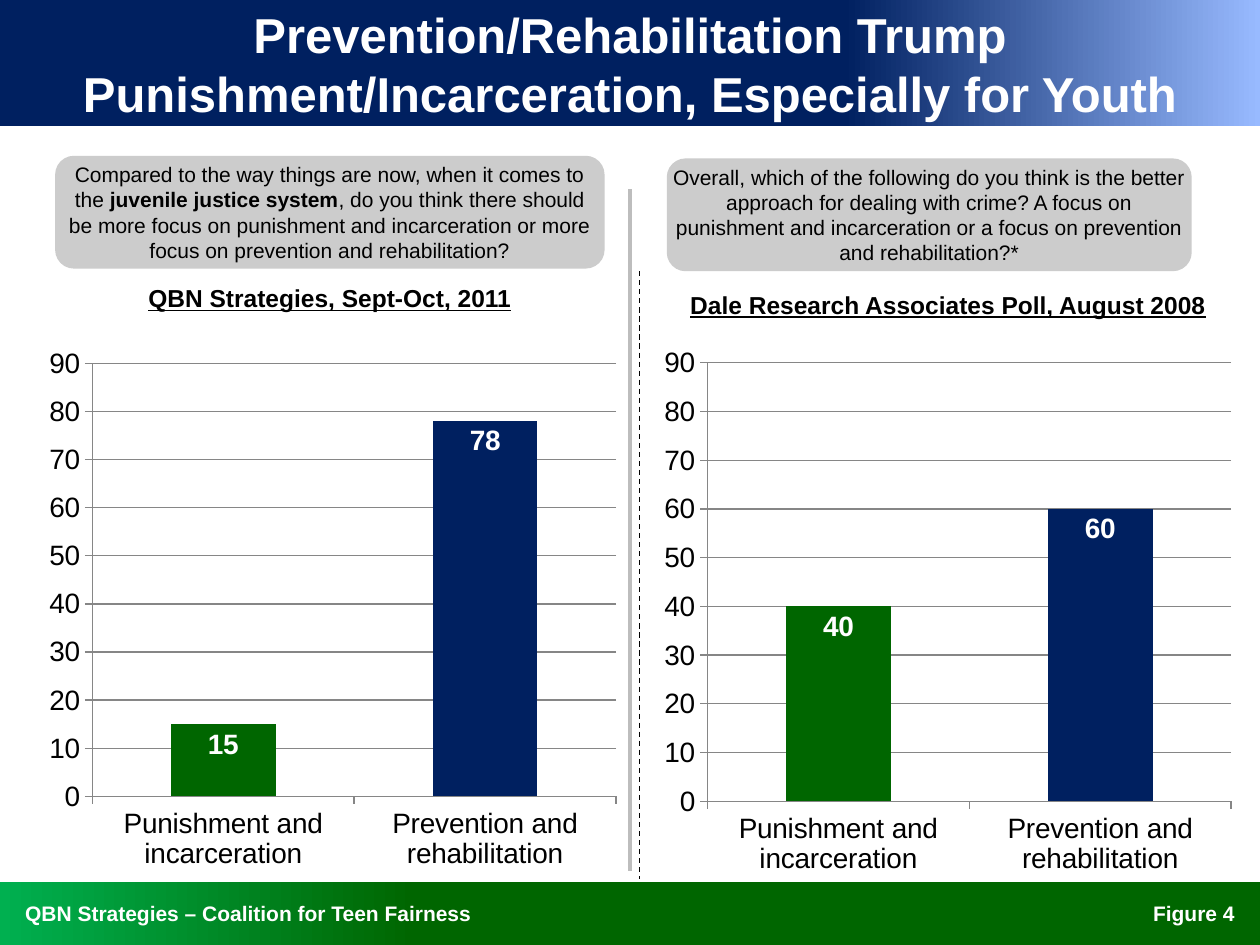
from lxml import etree
from pptx import Presentation
from pptx.chart.data import CategoryChartData
from pptx.dml.color import RGBColor
from pptx.enum.chart import XL_CHART_TYPE, XL_LABEL_POSITION, XL_TICK_MARK
from pptx.enum.dml import MSO_LINE
from pptx.enum.shapes import MSO_CONNECTOR, MSO_SHAPE
from pptx.enum.text import MSO_ANCHOR, MSO_AUTO_SIZE, PP_ALIGN
from pptx.oxml import parse_xml
from pptx.oxml.ns import qn
from pptx.util import Pt

COLUMN = XL_CHART_TYPE.COLUMN_CLUSTERED
INSIDE_END = XL_LABEL_POSITION.INSIDE_END
OUTSIDE = XL_TICK_MARK.OUTSIDE
STRAIGHT = MSO_CONNECTOR.STRAIGHT
DASH = MSO_LINE.DASH
RECT, ROUNDED = MSO_SHAPE.RECTANGLE, MSO_SHAPE.ROUNDED_RECTANGLE
MIDDLE, TOP = MSO_ANCHOR.MIDDLE, MSO_ANCHOR.TOP
LEFT, CENTER, RIGHT = PP_ALIGN.LEFT, PP_ALIGN.CENTER, PP_ALIGN.RIGHT
NO_FIT = MSO_AUTO_SIZE.NONE

FONT = "Arial"
NAVY, GREEN, WHITE, BLACK = "002060", "006600", "FFFFFF", "000000"
GRID_GRAY = "868686"
WIDTH, HEIGHT = 720, 540
CATEGORIES = ["Punishment and incarceration", "Prevention and rehabilitation"]
PLOT_LAYOUT = {"x": 0.11, "y": 0.03, "w": 0.86, "h": 0.81}


def rgb(color):
    return RGBColor.from_string(color)


def place(s, box):
    s.left, s.top, s.width, s.height = map(Pt, box)


def write(s, *parts, size=12, color=BLACK, bold=False, underline=False,
          align=CENTER, anchor=MIDDLE, insets=(0, 0, 0, 0), wrap=True):
    """Fill a shape with one paragraph; a part is text or (text, bold)."""
    tf = s.text_frame
    tf.auto_size, tf.word_wrap, tf.vertical_anchor = NO_FIT, wrap, anchor
    tf.margin_left, tf.margin_top, tf.margin_right, tf.margin_bottom = map(Pt, insets)
    p = tf.paragraphs[0]
    p.alignment = align
    for part in parts:
        text, strong = (part, bold) if isinstance(part, str) else part
        r = p.add_run()
        r.text = text
        r.font.name, r.font.size = FONT, Pt(size)
        r.font.bold, r.font.underline = strong, underline
        r.font.color.rgb = rgb(color)


def add_text(slide, box, text, **fmt):
    write(slide.shapes.add_textbox(*map(Pt, box)), text, bold=True, **fmt)


def add_shape(slide, kind, box):
    s = slide.shapes.add_shape(kind, *map(Pt, box))
    s.shadow.inherit = False
    s.line.fill.background()
    return s


def add_band(slide, box, start, end, angle):
    fill = add_shape(slide, RECT, box).fill
    fill.gradient()
    fill.gradient_angle = angle
    for stop, position, color in zip(fill.gradient_stops, (0, 0.33), (start, end)):
        stop.position = position
        stop.color.rgb = rgb(color)


def add_question(slide, box, *parts):
    s = add_shape(slide, ROUNDED, box)
    s.fill.solid()
    s.fill.fore_color.rgb = rgb("CCCCCC")
    write(s, *parts)


def add_divider(slide, x, top, bottom, color, width, dash=None):
    s = slide.shapes.add_connector(STRAIGHT, Pt(x), Pt(top), Pt(x), Pt(bottom))
    s.line.color.rgb = rgb(color)
    s.line.width = Pt(width)
    s.line.dash_style = dash
    etree.SubElement(s._element.spPr, qn("a:effectLst"))


def set_plot_layout(chart):
    """Fix the inner plot area as fractions of the chart."""
    ns = "http://schemas.openxmlformats.org/drawingml/2006/chart"
    modes = '<c:xMode val="edge"/><c:yMode val="edge"/>'
    sizes = "".join(f'<c:{k} val="{v}"/>' for k, v in PLOT_LAYOUT.items())
    layout = parse_xml(f'<c:layout xmlns:c="{ns}"><c:manualLayout>'
                       f'<c:layoutTarget val="inner"/>{modes}{sizes}'
                       '</c:manualLayout></c:layout>')
    area = chart._chartSpace.find(".//" + qn("c:plotArea"))
    for old in area.findall(qn("c:layout")):
        area.remove(old)
    area.insert(0, layout)


def add_poll_chart(slide, box, values):
    data = CategoryChartData()
    data.categories = CATEGORIES
    data.add_series("Series 1", values)
    chart = slide.shapes.add_chart(COLUMN, *map(Pt, box), data).chart
    chart.has_legend = chart.has_title = False
    chart.font.name, chart.font.size = FONT, Pt(16)
    chart.font.color.rgb = rgb(BLACK)
    set_plot_layout(chart)

    axis = chart.value_axis
    axis.minimum_scale, axis.maximum_scale, axis.major_unit = 0, 90, 10
    axis.major_gridlines.format.line.color.rgb = rgb(GRID_GRAY)
    for ax in (axis, chart.category_axis):
        ax.major_tick_mark = OUTSIDE
        ax.format.line.color.rgb = rgb(GRID_GRAY)

    plot = chart.plots[0]
    plot.gap_width, plot.vary_by_categories = 150, False
    series = plot.series[0]
    for target, color in ((series, NAVY), (series.points[0], GREEN)):
        target.format.fill.solid()
        target.format.fill.fore_color.rgb = rgb(color)
    labels = series.data_labels
    labels.show_value, labels.position = True, INSIDE_END
    labels.font.name, labels.font.size, labels.font.bold = FONT, Pt(16), True
    labels.font.color.rgb = rgb(WHITE)


def add_title(slide, text):
    title = slide.shapes.title
    slide.shapes._spTree.append(title._element)  # bring above the header band
    place(title, (0, 0, WIDTH, 72))
    write(title, text, size=28, color=WHITE, bold=True, insets=(14.4, 3.6, 14.4, 3.6))


def main():
    prs = Presentation()
    prs.slide_width, prs.slide_height = Pt(WIDTH), Pt(HEIGHT)
    slide = prs.slides.add_slide(prs.slide_layouts[5])

    add_band(slide, (0, 504, WIDTH, 36), "00B050", GREEN, 0)
    add_band(slide, (0, 0, WIDTH, 72), "98BAFF", NAVY, 180)
    add_text(slide, (0, 504, 498, 36), "QBN Strategies – Coalition for Teen Fairness",
             color=WHITE, align=LEFT, insets=(14.4, 3.6, 7.2, 3.6))
    add_divider(slide, 360, 108, 498, "BDBDBD", 2)
    add_title(slide, "Prevention/Rehabilitation Trump "
                     "Punishment/Incarceration, Especially for Youth")

    add_question(slide, (31.5, 89, 314, 64.5),
                 "Compared to the way things are now, when it comes to the ",
                 ("juvenile justice system", True),
                 ", do you think there should be more focus on punishment and "
                 "incarceration or more focus on prevention and rehabilitation?")
    add_question(slide, (381, 90.5, 300, 64.5),
                 "Overall, which of the following do you think is the better approach "
                 "for dealing with crime? A focus on punishment and incarceration or "
                 "a focus on prevention and rehabilitation?*")
    add_divider(slide, 365.5, 155, 502.5, BLACK, 0.75, DASH)

    add_text(slide, (376.5, 162, 330.5, 24), "Dale Research Associates Poll, August 2008",
             size=14, underline=True, anchor=TOP, insets=(7.2, 3.6, 7.2, 3.6))
    add_text(slide, (84, 162, 209, 17), "QBN Strategies, Sept-Oct, 2011",
             size=14, underline=True, anchor=TOP, wrap=False)
    add_poll_chart(slide, (14.5, 198.5, 348, 305.5), (15, 78))
    add_poll_chart(slide, (366, 198, 348, 309.5), (40, 60))
    add_text(slide, (648, 513, 72, 18), "Figure 4", color=WHITE, align=RIGHT,
             insets=(0, 3.6, 14.4, 3.6))
    prs.save("out.pptx")


if __name__ == "__main__":
    main()
